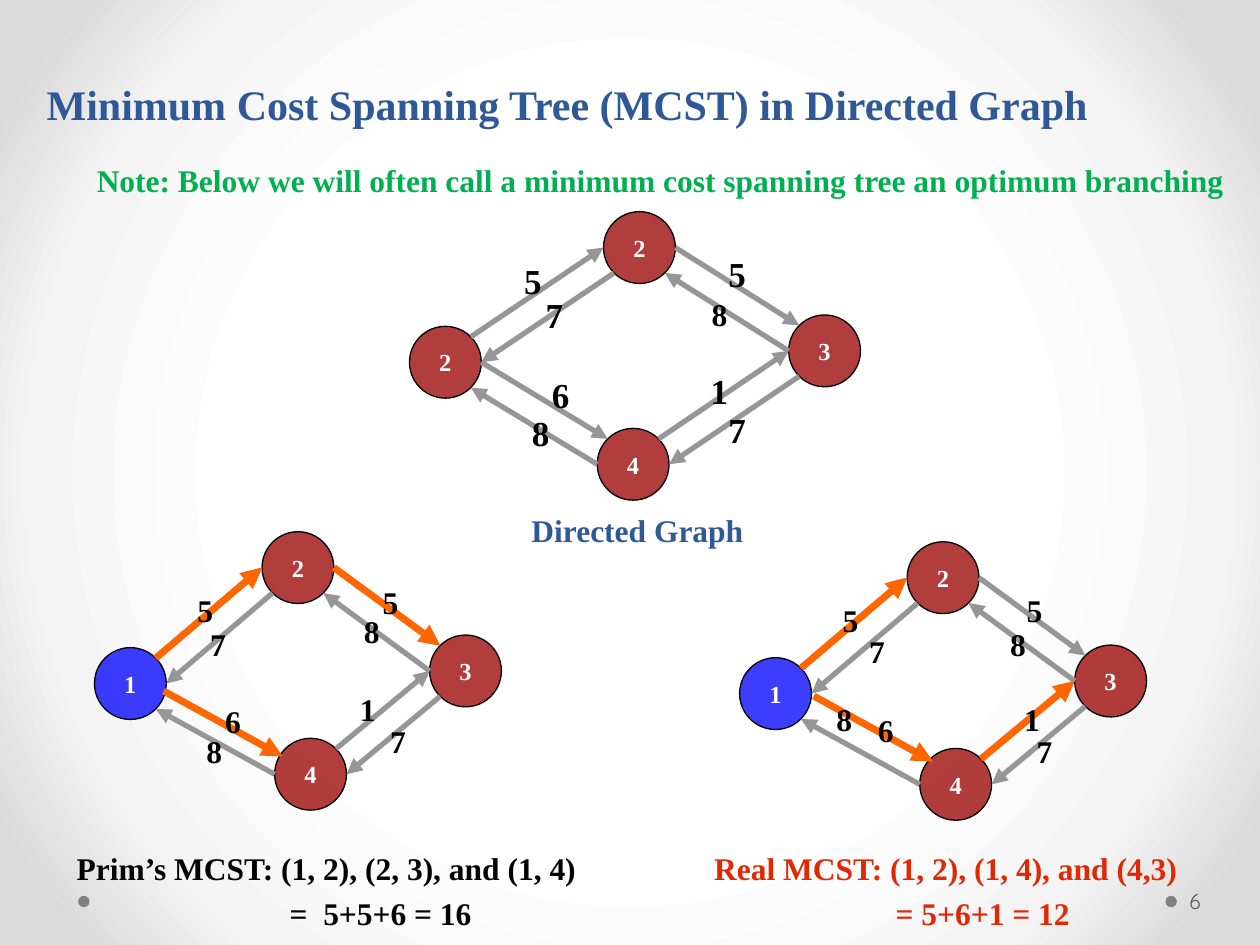
import math

import pptx
import pptx.dml.color
import pptx.enum.dml
import pptx.enum.shapes
import pptx.enum.text
import pptx.oxml
import pptx.oxml.ns
import pptx.util
from pptx.util import Inches

RGB = pptx.dml.color.RGBColor
ALIGN = pptx.enum.text.PP_ALIGN
ANCHOR = pptx.enum.text.MSO_ANCHOR
SHAPE = pptx.enum.shapes.MSO_SHAPE
NS = pptx.oxml.ns.nsdecls("a")

BLACK = RGB(0x00, 0x00, 0x00)
WHITE = RGB(0xFF, 0xFF, 0xFF)
HEADING = RGB(0x2F, 0x58, 0x97)
NOTE = RGB(0x00, 0xB0, 0x50)
REAL = RGB(0xE2, 0x27, 0x02)
ROOT = RGB(0x00, 0x00, 0xFF)
NODE = RGB(0x99, 0x00, 0x00)
EDGE = RGB(0x96, 0x96, 0x96)
CHOSEN = RGB(0xFF, 0x66, 0x00)
DOT = RGB(0x80, 0x80, 0x80)
NUMBER = RGB(0x59, 0x59, 0x59)
BACKDROP = [(0, "FFFFFF"), (50, "FFFFFF"), (76, "F4F4F4"), (92, "DADADA"), (100, "DADADA")]

DIAMETER = 0.57
RADIUS = DIAMETER / 2
SITES = {
    ("W", "N"): (45, 180), ("N", "W"): (225, 0),
    ("W", "S"): (0, 135), ("S", "W"): (180, 315),
    ("N", "E"): (0, 135), ("E", "N"): (180, 315),
    ("E", "S"): (225, 0), ("S", "E"): (45, 180),
}

TOP_NODES = {"W": (0, 0.91), "N": (1.54, 0), "E": (3.01, 0.82), "S": (1.49, 1.72)}
TREE_NODES = {"W": (0, 0.92), "N": (1.33, 0), "E": (2.66, 0.82), "S": (1.43, 1.64)}
TOP_COSTS = [
    ("5", 0.98, 0.55, 20), ("7", 1.15, 0.82, 20), ("6", 1.2, 1.45, 20), ("8", 1.04, 1.75, 20),
    ("5", 2.6, 0.49, 20), ("8", 2.46, 0.81, 18), ("1", 2.46, 1.42, 20), ("7", 2.6, 1.73, 20),
]
PRIM_COSTS = [
    ("5", 0.88, 0.62, 18), ("7", 0.98, 0.89, 18), ("6", 1.1, 1.5, 18), ("8", 0.95, 1.74, 18),
    ("5", 2.35, 0.56, 18), ("8", 2.2, 0.79, 18), ("1", 2.17, 1.41, 18), ("7", 2.41, 1.66, 18),
]
REAL_COSTS = [
    ("5", 0.88, 0.62, 18), ("7", 1.09, 0.87, 18), ("6", 1.16, 1.49, 18), ("8", 0.83, 1.41, 18),
    ("5", 2.34, 0.54, 18), ("8", 2.21, 0.81, 18), ("1", 2.32, 1.41, 18), ("7", 2.42, 1.66, 18),
]


def add_run(p, text, size, color, bold=True, font="Times New Roman"):
    r = p.add_run()
    r.text = text
    r.font.name = font
    r.font.size = pptx.util.Pt(size)
    r.font.bold = bold
    r.font.color.rgb = color


def frame(sp, anchor=ANCHOR.TOP, inset=None):
    tf = sp.text_frame
    tf.word_wrap = True
    tf.vertical_anchor = anchor
    if inset is not None:
        tf.margin_left = tf.margin_right = tf.margin_top = tf.margin_bottom = Inches(inset)
    return tf


def text_box(s, box, anchor=ANCHOR.TOP, inset=None):
    return frame(s.shapes.add_textbox(*map(Inches, box)), anchor, inset)


def ellipse(s, box, color):
    sp = s.shapes.add_shape(SHAPE.OVAL, *map(Inches, box))
    sp.shadow.inherit = False
    sp.fill.solid()
    sp.fill.fore_color.rgb = color
    sp.line.fill.background()
    return sp


def add_node(s, left, top, text, color):
    sp = ellipse(s, (left, top, DIAMETER, DIAMETER), color)
    solid = sp._element.spPr.find(pptx.oxml.ns.qn("a:solidFill"))
    solid[0].append(pptx.oxml.parse_xml(f'<a:alpha {NS} val="76000"/>'))
    sp.line.color.rgb = BLACK
    sp.line.width = pptx.util.Pt(0.75)
    p = frame(sp, ANCHOR.MIDDLE, 0).paragraphs[0]
    p.alignment = ALIGN.CENTER
    add_run(p, text, 14, WHITE)


def add_edge(s, start, end, color, width):
    points = [Inches(v) for v in (*start, *end)]
    cx = s.shapes.add_connector(pptx.enum.shapes.MSO_CONNECTOR.STRAIGHT, *points)
    cx.line.color.rgb = color
    cx.line.width = pptx.util.Pt(width)
    cx.line._get_or_add_ln().append(pptx.oxml.parse_xml(f'<a:tailEnd {NS} type="triangle"/>'))
    cx._element.spPr.append(pptx.oxml.parse_xml(f"<a:effectLst {NS}/>"))


def add_graph(s, left, top, nodes, names, root, costs, chosen=(), nudge=(0, 0)):
    for (x, y), name in zip(nodes.values(), names):
        add_node(s, left + x, top + y, name, root if (x == 0) else NODE)

    def site(key, angle, shift):
        x, y = nodes[key]
        a = math.radians(angle)
        return (left + x + RADIUS * (1 + math.cos(a)) + shift[0],
                top + y + RADIUS * (1 - math.sin(a)) + shift[1])

    for edges, color, width in ((SITES, EDGE, 3), (chosen, CHOSEN, 4)):
        for edge in edges:
            shift = nudge if edge == ("W", "S") else (0, 0)
            start, end = (site(k, a, shift) for k, a in zip(edge, SITES[edge]))
            add_edge(s, start, end, color, width)

    for text, x, y, size in costs:
        tf = text_box(s, (left + x - 0.15, top + y - 0.15, 0.3, 0.3), ANCHOR.MIDDLE, 0)
        tf.paragraphs[0].alignment = ALIGN.CENTER
        add_run(tf.paragraphs[0], text, size, BLACK)


def add_caption(s, box, edges, total, indent, color):
    tf = text_box(s, box, ANCHOR.MIDDLE)
    first, second = tf.paragraphs[0], tf.add_paragraph()
    for p, text in ((first, edges), (second, total)):
        p.line_spacing = 1.2
        add_run(p, text, 18, color)
    second._p.get_or_add_pPr().set("marL", str(Inches(indent)))


def add_heading(s, box):
    title = s.shapes.title
    title.left, title.top, title.width, title.height = map(Inches, box)
    p = frame(title).paragraphs[0]
    p.alignment = ALIGN.LEFT
    add_run(p, "Minimum Cost Spanning Tree (MCST) in Directed Graph", 24, HEADING)


def add_backdrop(s):
    stops = "".join(f'<a:gs pos="{pos * 1000}"><a:srgbClr val="{c}"/></a:gs>' for pos, c in BACKDROP)
    grad = pptx.oxml.parse_xml(
        f'<a:gradFill {NS} rotWithShape="1"><a:gsLst>{stops}</a:gsLst><a:path path="circle">'
        '<a:fillToRect l="50000" t="50000" r="50000" b="50000"/></a:path></a:gradFill>')
    s.background.fill.solid()
    bg = s._element.cSld.bg.bgPr
    bg.replace(bg[0], grad)


def add_footer(s):
    for left in (9.25, 0.62):
        ellipse(s, (left, 7.11, 0.09, 0.09), DOT)
    tf = text_box(s, (9.34, 6.95, 0.61, 0.4), ANCHOR.MIDDLE)
    add_run(tf.paragraphs[0], "6", 12, NUMBER, False, "Quicksand")


def main():
    prs = pptx.Presentation()
    prs.slide_width, prs.slide_height = Inches(10), Inches(7.5)
    s = prs.slides.add_slide(prs.slide_layouts[5])
    add_backdrop(s)
    add_footer(s)
    add_heading(s, (0.27, 0.57, 9.65, 0.51))
    for box, text, color in (
        ((0.67, 1.23, 9.8, 0.4),
         "Note: Below we will often call a minimum cost spanning tree an optimum branching", NOTE),
        ((4.12, 4.01, 1.9, 0.4), "Directed Graph", HEADING),
    ):
        add_run(text_box(s, box).paragraphs[0], text, 18, color)

    add_graph(s, 3.25, 1.68, TOP_NODES, "2234", NODE, TOP_COSTS)
    add_graph(s, 0.75, 4.22, TREE_NODES, "1234", ROOT, PRIM_COSTS,
              [("W", "N"), ("N", "E"), ("W", "S")], (-0.02, 0.06))
    add_graph(s, 5.87, 4.3, TREE_NODES, "1234", ROOT, REAL_COSTS,
              [("W", "N"), ("W", "S"), ("S", "E")], (0.02, 0.02))

    add_caption(s, (0.51, 6.62, 4.39, 0.83), "Prim’s MCST: (1, 2), (2, 3), and (1, 4)",
                "=  5+5+6 = 16", 1.69, BLACK)
    add_caption(s, (5.57, 6.62, 3.91, 0.83), "Real MCST: (1, 2), (1, 4), and (4,3)",
                "= 5+6+1 = 12", 1.44, REAL)
    prs.save("out.pptx")


if __name__ == "__main__":
    main()
